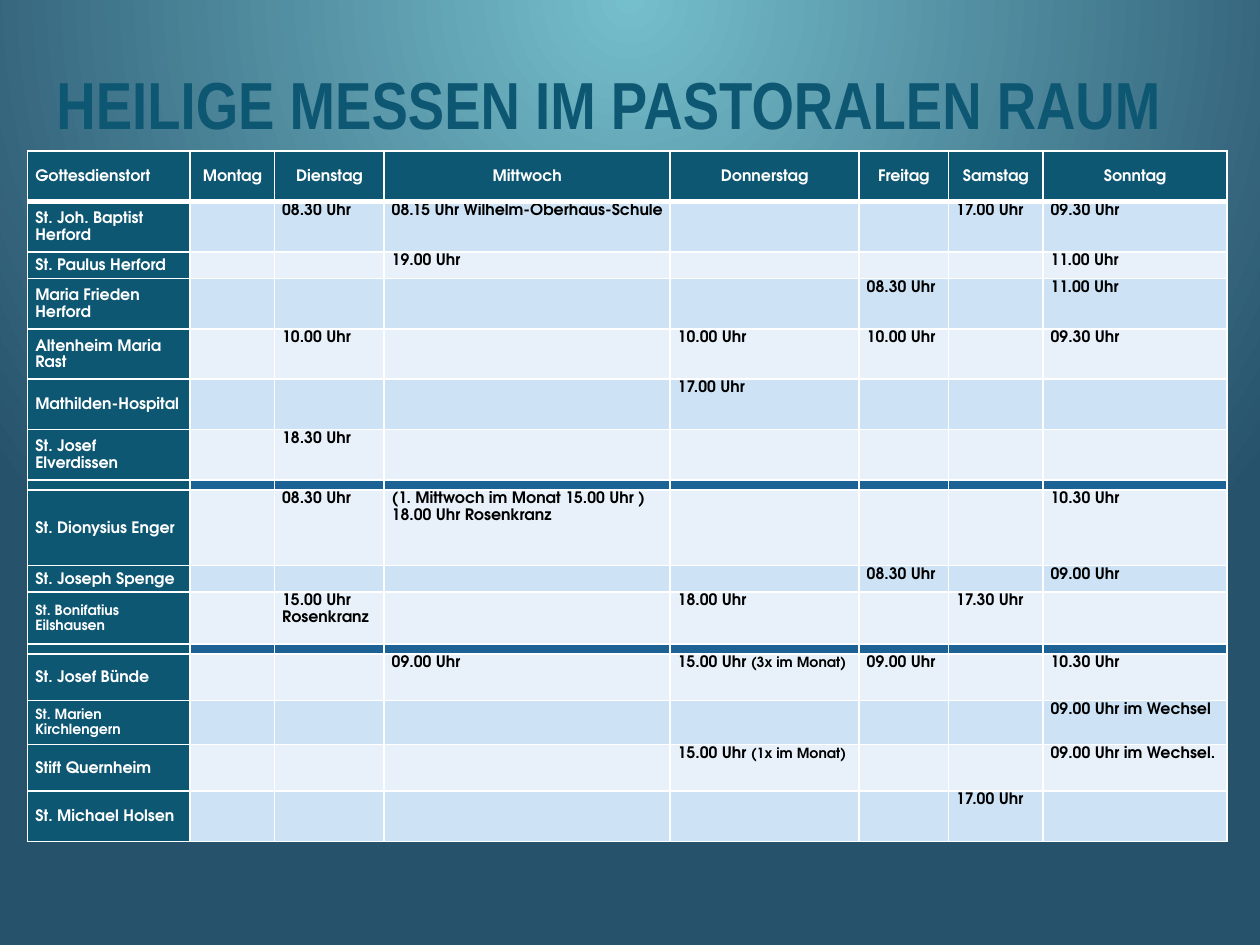
from dataclasses import dataclass

from lxml.etree import SubElement
from pptx import Presentation
from pptx.dml.color import RGBColor
from pptx.enum.text import MSO_ANCHOR, PP_ALIGN
from pptx.oxml.ns import qn
from pptx.util import Inches, Pt


@dataclass(frozen=True)
class Theme:
    """Colours, fonts and type sizes of the slide."""

    glow: str = "75BECB"
    night: str = "27526C"
    petrol: str = "0E5772"
    divider: str = "1D6294"
    bands: tuple = ("E8F1FA", "CDE3F5")
    white: str = "FFFFFF"
    black: str = "000000"
    title_font: str = "Arial Narrow"
    table_font: str = "TeX Gyre Adventor"
    title_size: float = 38
    table_size: float = 9
    small_size: float = 8
    empty_size: float = 1
    line_spacing: float = 1.15


THEME = Theme()
DAYS = ["Montag", "Dienstag", "Mittwoch", "Donnerstag", "Freitag", "Samstag", "Sonntag"]
COLUMN_WIDTHS = [1.29, 0.67, 0.87, 2.27, 1.5, 0.71, 0.75, 1.46]
HEADER_HEIGHT = 0.4
SMALL_MARK = "|"
DIVIDER = (0.08, "", {})
MASSES = [
    (0.4, "St. Joh. Baptist Herford", {
        "Dienstag": "08.30 Uhr", "Mittwoch": "08.15 Uhr Wilhelm-Oberhaus-Schule",
        "Samstag": "17.00 Uhr", "Sonntag": "09.30 Uhr"}),
    (0.21, "St. Paulus Herford", {"Mittwoch": "19.00 Uhr", "Sonntag": "11.00 Uhr"}),
    (0.4, "Maria Frieden Herford", {"Freitag": "08.30 Uhr", "Sonntag": "11.00 Uhr"}),
    (0.4, "Altenheim Maria Rast", {
        "Dienstag": "10.00 Uhr", "Donnerstag": "10.00 Uhr",
        "Freitag": "10.00 Uhr", "Sonntag": "09.30 Uhr"}),
    (0.4, "Mathilden-Hospital", {"Donnerstag": "17.00 Uhr"}),
    (0.4, "St. Josef Elverdissen", {"Dienstag": "18.30 Uhr"}),
    DIVIDER,
    (0.6, "St. Dionysius Enger", {
        "Dienstag": "08.30 Uhr",
        "Mittwoch": "(1. Mittwoch im Monat 15.00 Uhr )\n18.00 Uhr Rosenkranz",
        "Sonntag": "10.30 Uhr"}),
    (0.21, "St. Joseph Spenge", {"Freitag": "08.30 Uhr", "Sonntag": "09.00 Uhr"}),
    (0.41, "|St. Bonifatius Eilshausen", {
        "Dienstag": "15.00 Uhr Rosenkranz", "Donnerstag": "18.00 Uhr",
        "Samstag": "17.30 Uhr"}),
    DIVIDER,
    (0.37, "St. Josef Bünde", {
        "Mittwoch": "09.00 Uhr", "Donnerstag": "15.00 Uhr |(3x im Monat)",
        "Freitag": "09.00 Uhr", "Sonntag": "10.30 Uhr"}),
    (0.35, "|St. Marien Kirchlengern", {"Sonntag": "09.00 Uhr im Wechsel"}),
    (0.37, "Stift Quernheim", {
        "Donnerstag": "15.00 Uhr |(1x im Monat)", "Sonntag": "09.00 Uhr im Wechsel."}),
    (0.4, "St. Michael Holsen", {"Samstag": "17.00 Uhr"}),
]


def add_run(paragraph, text, font_name, size, color):
    """Append one bold run to the paragraph."""
    run = paragraph.add_run()
    run.text = text
    run.font.name = font_name
    run.font.size = Pt(size)
    run.font.bold = True
    run.font.color.rgb = RGBColor.from_string(color)


def paint_background(slide):
    """Fill the background with a circular glow from the top centre."""
    fill = slide.background.fill
    fill.gradient()
    for stop, color in zip(fill.gradient_stops, (THEME.glow, THEME.night)):
        stop.color.rgb = RGBColor.from_string(color)
    gradient = slide.element.find(".//" + qn("a:gradFill"))
    gradient.remove(gradient.find(qn("a:lin")))
    circle = SubElement(gradient, qn("a:path"), {"path": "circle"})
    SubElement(circle, qn("a:fillToRect"), {"b": "100000"})


def add_title(slide, left, top, width, height):
    """Place the heading in the given box."""
    heading = slide.shapes.add_textbox(left, top, width, height).text_frame
    heading.word_wrap = True
    heading.vertical_anchor = MSO_ANCHOR.MIDDLE
    add_run(heading.paragraphs[0], "HEILIGE MESSEN IM PASTORALEN RAUM",
            THEME.title_font, THEME.title_size, THEME.petrol)


def draw_borders(cell, top, bottom):
    """Draw white borders, with the given top and bottom widths in points."""
    properties = cell._tc.get_or_add_tcPr()
    for side, width in (("L", 1), ("R", 1), ("T", top), ("B", bottom)):
        line = SubElement(properties, qn(f"a:ln{side}"), {"w": str(Pt(width))})
        solid = SubElement(line, qn("a:solidFill"))
        SubElement(solid, qn("a:srgbClr"), {"val": THEME.white})


def write_cell(cell, text, color, align):
    """Write the lines of a cell; what follows the mark is set small."""
    frame = cell.text_frame
    for index, line in enumerate(text.split("\n")):
        paragraph = frame.add_paragraph() if index else frame.paragraphs[0]
        paragraph.alignment = align
        paragraph.line_spacing = THEME.line_spacing
        regular, _, small = line.partition(SMALL_MARK)
        for part, size in ((regular, THEME.table_size), (small, THEME.small_size)):
            if part:
                add_run(paragraph, part, THEME.table_font, size, color)
        if not line:
            SubElement(paragraph._p, qn("a:endParaRPr"),
                       {"sz": str(Pt(THEME.empty_size).centipoints)})


def format_cell(cell, text, row, column, divider):
    """Style and fill one cell according to its place in the schedule."""
    header, place = row == 0, column == 0
    dark = header or place
    cell.margin_left = cell.margin_right = Inches(0.06)
    cell.margin_top = cell.margin_bottom = 0
    cell.vertical_anchor = MSO_ANCHOR.MIDDLE if dark else MSO_ANCHOR.TOP
    draw_borders(cell, 3 if row == 1 else 1, 3 if header else 1)
    band = THEME.divider if divider else THEME.bands[row % 2]
    cell.fill.solid()
    cell.fill.fore_color.rgb = RGBColor.from_string(THEME.petrol if dark else band)
    write_cell(cell, text, THEME.white if dark else THEME.black,
               PP_ALIGN.CENTER if header and not place else PP_ALIGN.LEFT)


def add_schedule(slide, left, top, width, height):
    """Place the table of masses by church and weekday in the given box."""
    rows = [(HEADER_HEIGHT, "Gottesdienstort", dict(zip(DAYS, DAYS)))] + MASSES
    schedule = slide.shapes.add_table(
        len(rows), len(COLUMN_WIDTHS), left, top, width, height).table
    for column, column_width in zip(schedule.columns, COLUMN_WIDTHS):
        column.width = Inches(column_width)
    for row, (row_height, place, times) in enumerate(rows):
        schedule.rows[row].height = Inches(row_height)
        texts = [place] + [times.get(day, "") for day in DAYS]
        for column, text in enumerate(texts):
            format_cell(schedule.cell(row, column), text, row, column, not place)


def main():
    """Build the slide and save it."""
    presentation = Presentation()
    presentation.slide_width, presentation.slide_height = Inches(10), Inches(7.5)
    slide = presentation.slides.add_slide(presentation.slide_layouts[6])
    paint_background(slide)
    add_title(slide, Inches(0.35), Inches(0.26), Inches(9.23), Inches(1.12))
    add_schedule(slide, Inches(0.22), Inches(1.2), Inches(9.52), Inches(5.45))
    presentation.save("out.pptx")


if __name__ == "__main__":
    main()
